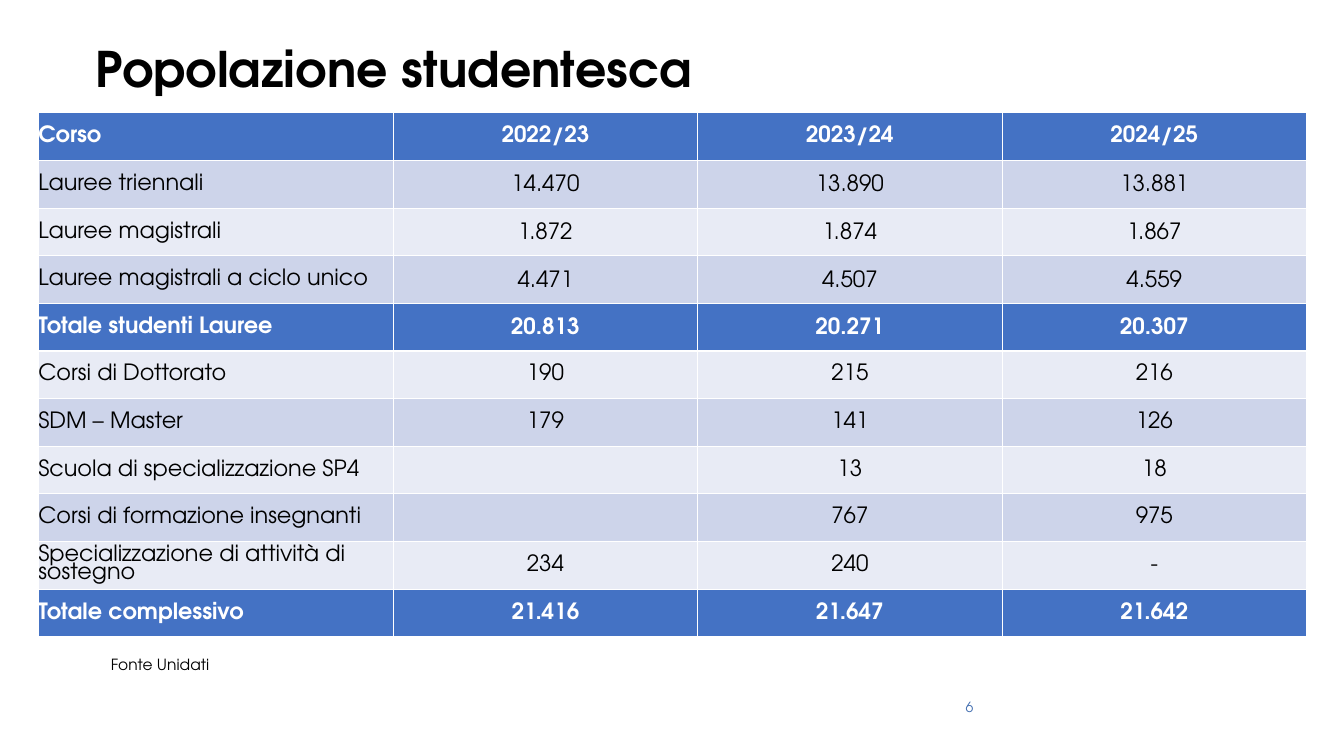
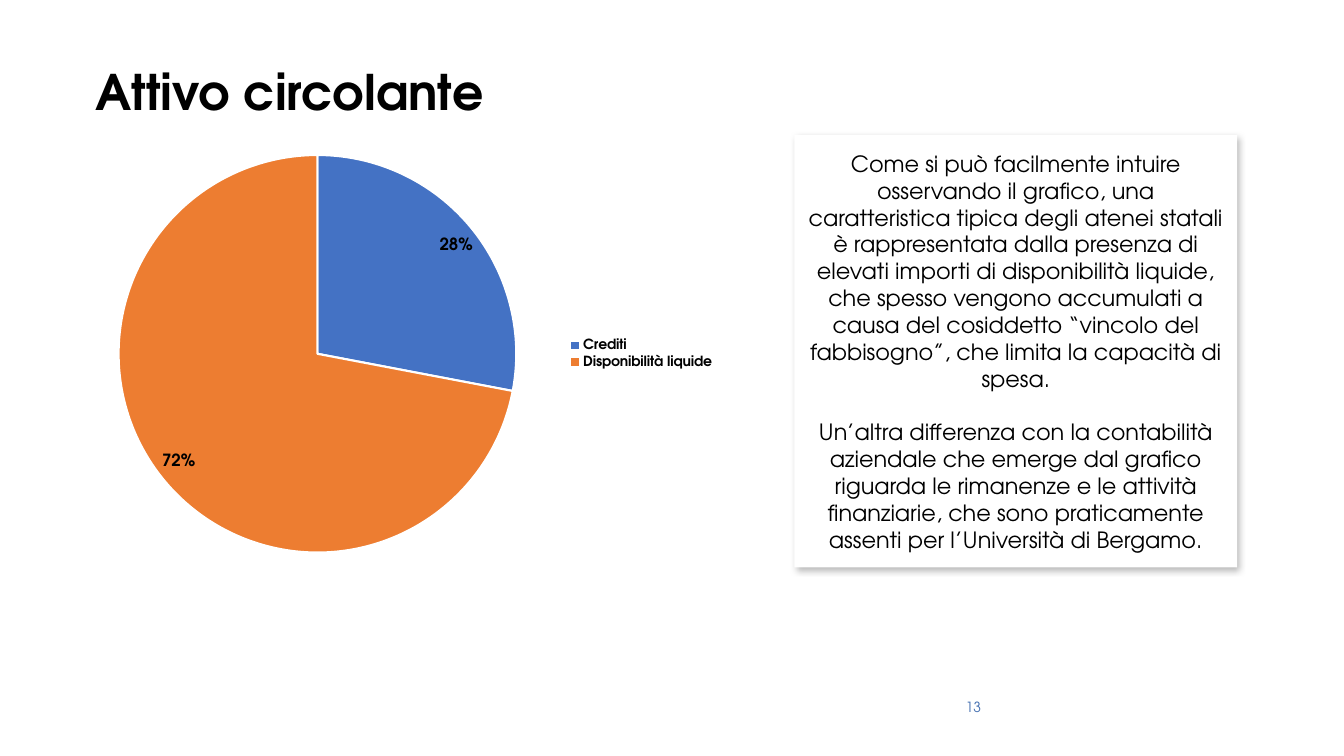
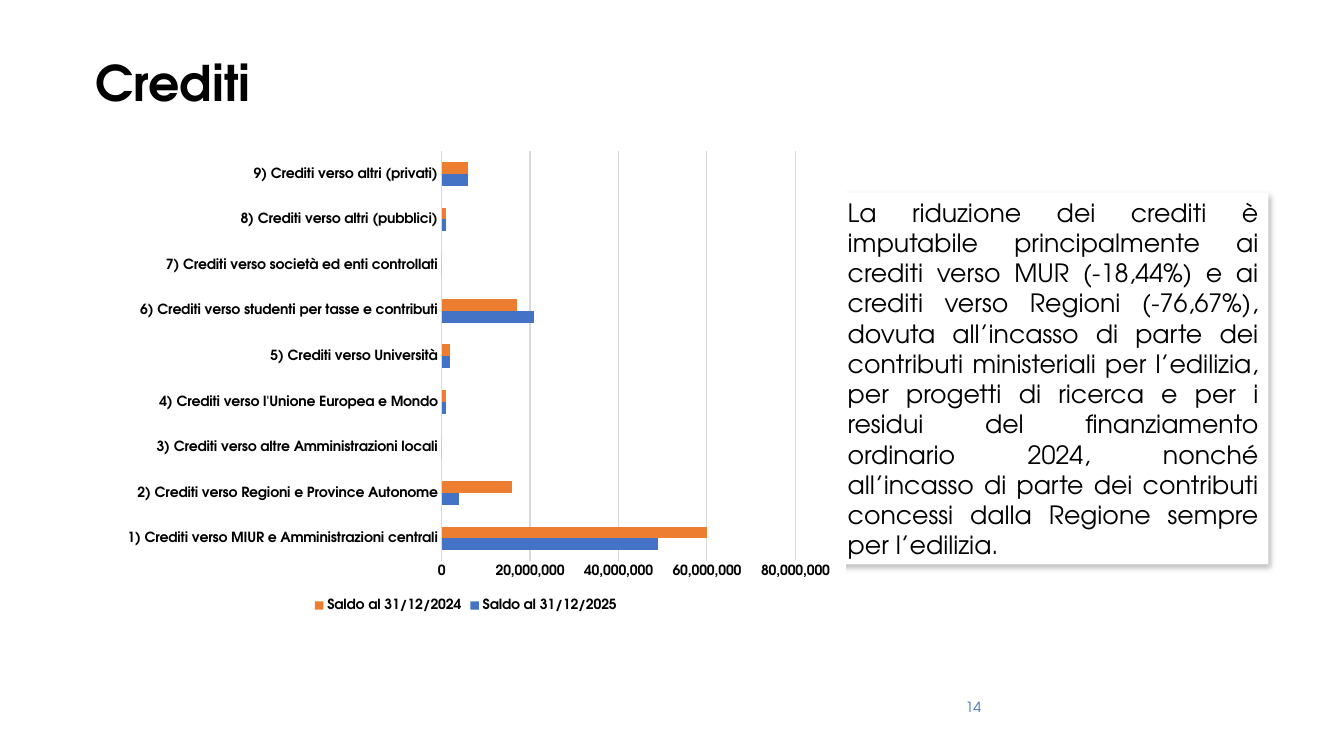
from dataclasses import dataclass

from lxml.etree import SubElement
from pptx import Presentation
from pptx.chart.data import CategoryChartData
from pptx.dml.color import RGBColor
from pptx.enum.chart import XL_CHART_TYPE, XL_LABEL_POSITION, XL_LEGEND_POSITION, XL_TICK_MARK
from pptx.enum.shapes import MSO_SHAPE
from pptx.enum.text import MSO_ANCHOR, PP_ALIGN
from pptx.oxml.ns import qn
from pptx.util import Inches, Pt


@dataclass(frozen=True)
class Theme:
    font: str = "TeX Gyre Adventor"
    black: str = "000000"
    white: str = "FFFFFF"
    blue: str = "4472C4"
    orange: str = "ED7D31"
    page_blue: str = "426EB0"
    band_dark: str = "CDD4EA"
    band_light: str = "E8EBF5"
    grid: str = "D9D9D9"
    title: int = 35
    large: int = 18
    text: int = 16
    label: int = 12
    source: int = 11
    small: int = 10


THEME = Theme()

STUDENTS = {
    "title": "Popolazione studentesca",
    "title_top": 0.4,
    "page": "6",
    "source": "Fonte Unidati",
    "columns": [3.52, 3.02, 3.02, 3.02],
    "height": 5.2,
    "totals": {0, 4, 10},
    "spaced": range(1, 5),
    "rows": [
        ("Corso", "2022/23", "2023/24", "2024/25"),
        ("Lauree triennali", "14.470", "13.890", "13.881"),
        ("Lauree magistrali", "1.872", "1.874", "1.867"),
        ("Lauree magistrali a ciclo unico", "4.471", "4.507", "4.559"),
        ("Totale studenti Lauree", "20.813", "20.271", "20.307"),
        ("Corsi di Dottorato", "190", "215", "216"),
        ("SDM – Master", "179", "141", "126"),
        ("Scuola di specializzazione SP4", "", "13", "18"),
        ("Corsi di formazione insegnanti", "", "767", "975"),
        ("Specializzazione di attività di sostegno", "234", "240", "-"),
        ("Totale complessivo", "21.416", "21.647", "21.642"),
    ],
}

ASSETS = {
    "title": "Attivo circolante",
    "title_top": 0.63,
    "page": "13",
    "categories": ["Crediti", "Disponibilità liquide"],
    "series": {"Series 1": [28, 72]},
    "colors": [THEME.blue, THEME.orange],
    "comment": [
        "Come si può facilmente intuire osservando il grafico, una caratteristica tipica degli "
        "atenei statali è rappresentata dalla presenza di elevati importi di disponibilità "
        "liquide, che spesso vengono accumulati a causa del cosiddetto “vincolo del "
        "fabbisogno”, che limita la capacità di spesa.",
        "Un’altra differenza con la contabilità aziendale che emerge dal grafico riguarda le "
        "rimanenze e le attività finanziarie, che sono praticamente assenti per l’Università "
        "di Bergamo.",
    ],
}

CREDITS = {
    "title": "Crediti",
    "title_top": 0.54,
    "page": "14",
    "categories": [
        "1) Crediti verso MIUR e Amministrazioni centrali",
        "2) Crediti verso Regioni e Province Autonome",
        "3) Crediti verso altre Amministrazioni locali",
        "4) Crediti verso l'Unione Europea e Mondo",
        "5) Crediti verso Università",
        "6) Crediti verso studenti per tasse e contributi",
        "7) Crediti verso società ed enti controllati",
        "8) Crediti verso altri (pubblici)",
        "9) Crediti verso altri (privati)",
    ],
    "series": {
        "Saldo al 31/12/2025": [million * 1_000_000 for million in (49, 4, 0, 1, 2, 21, 0, 1, 6)],
        "Saldo al 31/12/2024": [million * 1_000_000 for million in (60, 16, 0, 1, 2, 17, 0, 1, 6)],
    },
    "colors": [THEME.blue, THEME.orange],
    "chart_area": (0.85, 1.4, 7.54, 4.71),
    "plot_area": (4.38, 1.5, 3.51, 4.07),
    "comment": [
        "La riduzione dei crediti è imputabile principalmente ai crediti verso MUR (-18,44%) e "
        "ai crediti verso Regioni (-76,67%), dovuta all’incasso di parte dei contributi "
        "ministeriali per l’edilizia, per progetti di ricerca e per i residui del finanziamento "
        "ordinario 2024, nonché all’incasso di parte dei contributi concessi dalla Regione "
        "sempre per l’edilizia.",
    ],
}


def set_all(target, **values):
    for name, value in values.items():
        setattr(target, name, value)


def rgb(color):
    return RGBColor.from_string(color)


def paint(fill, color):
    fill.solid()
    fill.fore_color.rgb = rgb(color)


def style_font(font, size, color=THEME.black, bold=False):
    set_all(font, name=THEME.font, size=Pt(size), bold=bold)
    font.color.rgb = rgb(color)


def style_line(line, color, width):
    line.color.rgb = rgb(color)
    line.width = Pt(width)


def write(frame, texts, size, color=THEME.black, bold=False, **formats):
    for index, text in enumerate(texts):
        para = frame.add_paragraph() if index else frame.paragraphs[0]
        set_all(para, **formats)
        if index:
            para.space_before = Pt(19)
        span = para.add_run()
        span.text = text
        style_font(span.font, size, color, bold)


def add_text(page, area, text, size, anchor=MSO_ANCHOR.TOP, **formats):
    box = page.shapes.add_textbox(*map(Inches, area))
    set_all(box.text_frame, word_wrap=True, vertical_anchor=anchor)
    write(box.text_frame, [text], size, **formats)


def add_page(deck, content):
    """Add a blank page with the shared title and page number."""
    page = deck.slides.add_slide(deck.slide_layouts[6])
    add_text(page, (0.85, content["title_top"], 11.65, 1.09), content["title"], THEME.title,
             bold=True, line_spacing=0.9)
    add_text(page, (9.48, 6.88, 3, 0.4), content["page"], THEME.small, color=THEME.page_blue)
    return page


def add_comment(page, area, texts, size, alignment):
    """Add a white card with a soft shadow."""
    card = page.shapes.add_shape(MSO_SHAPE.RECTANGLE, *map(Inches, area))
    paint(card.fill, THEME.white)
    card.line.fill.background()
    card.shadow.inherit = False
    effects = card._element.spPr.find(qn("a:effectLst"))
    shadow = SubElement(effects, qn("a:outerShdw"), blurRad=str(Pt(4.5)), dist=str(Pt(2.6)),
                        dir=str(53 * 60000), algn="tl", rotWithShape="0")
    color = SubElement(shadow, qn("a:srgbClr"), val=THEME.black)
    SubElement(color, qn("a:alpha"), val="27000")
    set_all(card.text_frame, word_wrap=True, vertical_anchor=MSO_ANCHOR.MIDDLE)
    write(card.text_frame, texts, size, alignment=alignment)


def add_borders(cell, widths):
    """Put white borders before the cell's fill, as the schema orders them."""
    properties = cell._tc.get_or_add_tcPr()
    for index, (side, width) in enumerate(widths.items()):
        border = SubElement(properties, qn(f"a:{side}"), w=str(Pt(width)))
        SubElement(SubElement(border, qn("a:solidFill")), qn("a:srgbClr"), val=THEME.white)
        properties.insert(index, border)


def add_student_table(page, content):
    rows, columns = content["rows"], content["columns"]
    table = page.shapes.add_table(len(rows), len(columns), Inches(0.38), Inches(1.12),
                                  Inches(sum(columns)), Inches(content["height"])).table
    set_all(table, first_row=False, horz_banding=False)
    for column, width in zip(table.columns, columns):
        column.width = Inches(width)
    body_count = 0
    for row_index, values in enumerate(rows):
        table.rows[row_index].height = Inches(content["height"] / len(rows))
        total = row_index in content["totals"]
        if total:
            fill = THEME.blue
        else:
            fill = (THEME.band_dark, THEME.band_light)[body_count % 2]
            body_count += 1
        for column_index, value in enumerate(values):
            cell = table.cell(row_index, column_index)
            set_all(cell, vertical_anchor=MSO_ANCHOR.MIDDLE, margin_left=0, margin_right=0,
                    margin_top=0, margin_bottom=0)
            paint(cell.fill, fill)
            add_borders(cell, {"lnL": 1, "lnR": 1, "lnT": 1.5 if row_index == 1 else 1,
                               "lnB": 1.5 if row_index == 0 else 1})
            formats = {"alignment": PP_ALIGN.CENTER if column_index else PP_ALIGN.LEFT}
            if column_index and row_index in content["spaced"]:
                formats.update(line_spacing=1.15, space_after=Pt(10))
            elif len(value) > 35:
                formats["line_spacing"] = 0.85
            write(cell.text_frame, [value], THEME.text,
                  THEME.white if total else THEME.black, total, **formats)


def add_chart(page, kind, area, content, legend_position):
    data = CategoryChartData()
    data.categories = content["categories"]
    for name, values in content["series"].items():
        data.add_series(name, values)
    chart = page.shapes.add_chart(kind, *map(Inches, area), data).chart
    set_all(chart, has_title=False, has_legend=True)
    style_font(chart.font, THEME.small)
    set_all(chart.legend, position=legend_position, include_in_layout=False)
    style_font(chart.legend.font, THEME.small, bold=True)
    background = SubElement(chart._chartSpace, qn("c:spPr"))
    SubElement(SubElement(background, qn("a:solidFill")), qn("a:srgbClr"), val=THEME.white)
    SubElement(SubElement(background, qn("a:ln")), qn("a:noFill"))
    chart._chartSpace.chart.addnext(background)
    return chart


def place_plot(chart, chart_area, plot_area):
    """Fix the inner plot area, given in slide inches, inside the chart."""
    left, top, width, height = chart_area
    plot_left, plot_top, plot_width, plot_height = plot_area
    shares = {"x": (plot_left - left) / width, "y": (plot_top - top) / height,
              "w": plot_width / width, "h": plot_height / height}
    plot_element = chart._chartSpace.chart.plotArea
    layout = plot_element.find(qn("c:layout"))
    if layout is None:
        layout = SubElement(plot_element, qn("c:layout"))
        plot_element.insert(0, layout)
    manual = SubElement(layout, qn("c:manualLayout"))
    SubElement(manual, qn("c:layoutTarget"), val="inner")
    for side in ("x", "y"):
        SubElement(manual, qn(f"c:{side}Mode"), val="edge")
    for side, share in shares.items():
        SubElement(manual, qn(f"c:{side}"), val=f"{share:.4f}")


def add_asset_pie(page, content):
    chart = add_chart(page, XL_CHART_TYPE.PIE, (0.68, 1.4, 6.51, 4.22), content,
                      XL_LEGEND_POSITION.RIGHT)
    plot = chart.plots[0]
    set_all(plot, vary_by_categories=True, has_data_labels=True)
    for index, color in enumerate(content["colors"]):
        point = plot.series[0].points[index]
        paint(point.format.fill, color)
        style_line(point.format.line, THEME.white, 1.5)
    set_all(plot.data_labels, show_percentage=True, show_value=False, number_format="0%",
            number_format_is_linked=False, position=XL_LABEL_POSITION.BEST_FIT)
    style_font(plot.data_labels.font, THEME.label, bold=True)


def add_credit_bars(page, content):
    chart = add_chart(page, XL_CHART_TYPE.BAR_CLUSTERED, content["chart_area"], content,
                      XL_LEGEND_POSITION.BOTTOM)
    place_plot(chart, content["chart_area"], content["plot_area"])
    plot = chart.plots[0]
    set_all(plot, vary_by_categories=False, gap_width=182, overlap=0)
    for series, color in zip(plot.series, content["colors"]):
        paint(series.format.fill, color)
    for axis in (chart.category_axis, chart.value_axis):
        set_all(axis, major_tick_mark=XL_TICK_MARK.NONE, minor_tick_mark=XL_TICK_MARK.NONE)
        style_font(axis.tick_labels.font, THEME.small, bold=True)
    style_line(chart.category_axis.format.line, THEME.grid, 0.75)
    values = chart.value_axis
    set_all(values, minimum_scale=0, maximum_scale=80_000_000, major_unit=20_000_000,
            has_major_gridlines=True)
    set_all(values.tick_labels, number_format="#,##0", number_format_is_linked=False)
    values.format.line.fill.background()
    style_line(values.major_gridlines.format.line, THEME.grid, 0.75)


def main():
    deck = Presentation()
    set_all(deck, slide_width=Inches(13.33), slide_height=Inches(7.5))

    page = add_page(deck, STUDENTS)
    add_text(page, (1, 6.31, 11.65, 0.58), STUDENTS["source"], THEME.source,
             anchor=MSO_ANCHOR.MIDDLE, alignment=PP_ALIGN.JUSTIFY, line_spacing=0.9)
    add_student_table(page, STUDENTS)

    page = add_page(deck, ASSETS)
    add_comment(page, (7.88, 1.34, 4.39, 4.29), ASSETS["comment"], THEME.text, PP_ALIGN.CENTER)
    add_asset_pie(page, ASSETS)

    page = add_page(deck, CREDITS)
    add_comment(page, (8.31, 1.91, 4.27, 3.69), CREDITS["comment"], THEME.large,
                PP_ALIGN.JUSTIFY)
    add_credit_bars(page, CREDITS)

    deck.save("out.pptx")


if __name__ == "__main__":
    main()
